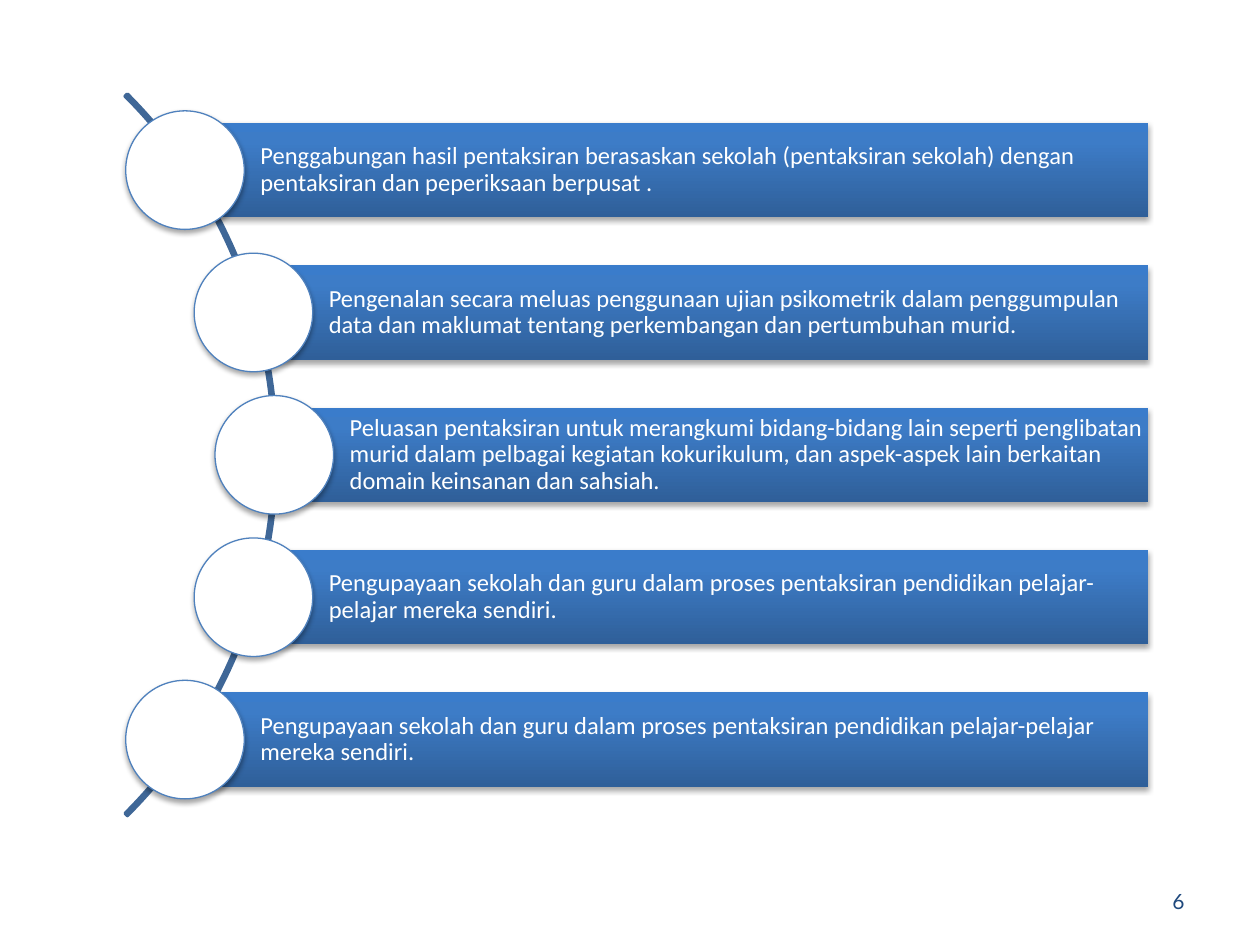
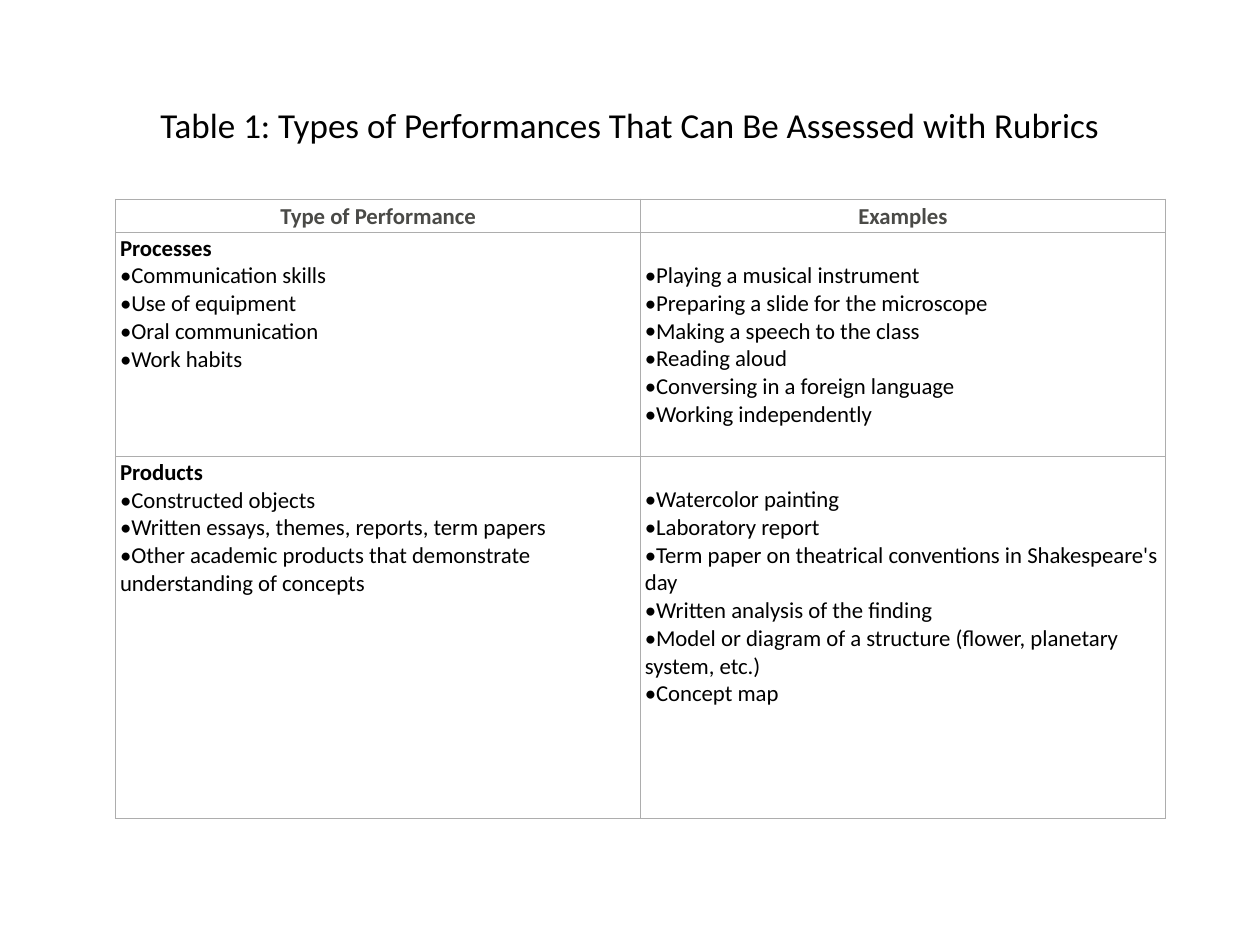
from copy import deepcopy

from lxml import etree
from pptx import Presentation
from pptx import util as u
from pptx.dml.color import RGBColor
from pptx.enum import shapes, text
from pptx.oxml import parse_xml
from pptx.oxml.ns import nsdecls, qn

COLOURS = {
    "white": "FFFFFF",
    "black": "000000",
    "arc": "3F6797",
    "ring": "4F81BD",
    "bar_bottom": "2F5F99",
    "bar_middle": "3D7CC7",
    "bar_top": "3A7CCB",
    "page": "1F497D",
    "heading": "4A4A47",
    "grid": "ADADAD",
}
FONT = "Calibri"
PAGE_FONT = "Lato"

# Curved list, in cm
ARC_LEFT, ARC_SIZE = -14.99, 20.57
MIDDLE_Y, PITCH = 9.17, 2.87
BAR_HEIGHT, BAR_RIGHT = 1.9, 23.14
CIRCLE_SIZE = 2.39
CIRCLE_CENTRES = [3.73, 5.11, 5.53, 5.11, 3.73]

EMPOWERMENT = ("Pengupayaan sekolah dan guru dalam proses pentaksiran "
               "pendidikan pelajar-pelajar mereka sendiri.")
REFORMS = [
    "Penggabungan hasil pentaksiran berasaskan sekolah (pentaksiran sekolah) "
    "dengan pentaksiran dan peperiksaan berpusat .",
    "Pengenalan secara meluas penggunaan ujian psikometrik dalam penggumpulan "
    "data dan maklumat tentang perkembangan dan pertumbuhan murid.",
    "Peluasan pentaksiran untuk merangkumi bidang-bidang lain seperti "
    "penglibatan murid dalam pelbagai kegiatan kokurikulum, dan aspek-aspek "
    "lain berkaitan domain keinsanan dan sahsiah.",
    EMPOWERMENT,
    EMPOWERMENT,
]

# Rubric table: (heading, kinds, examples)
HEADINGS = ["Type of Performance", "Examples"]
PERFORMANCES = [
    ("Processes",
     ["Communication skills", "Use of equipment", "Oral communication",
      "Work habits"],
     ["Playing a musical instrument", "Preparing a slide for the microscope",
      "Making a speech to the class", "Reading aloud",
      "Conversing in a foreign language", "Working independently"]),
    ("Products",
     ["Constructed objects", "Written essays, themes, reports, term papers",
      "Other academic products that demonstrate understanding of concepts"],
     ["Watercolor painting", "Laboratory report",
      "Term paper on theatrical conventions in Shakespeare's day",
      "Written analysis of the finding",
      "Model or diagram of a structure (flower, planetary system, etc.)",
      "Concept map"]),
]
ROW_HEIGHTS = [0.68, 4.52, 7.29]
COLUMN_WIDTH = 10.58


def rgb(name):
    return RGBColor.from_string(COLOURS[name])


def add_run(paragraph, words, size, colour, bold=False, font=FONT):
    run = paragraph.add_run()
    run.text = words
    run.font.name = font
    run.font.size = u.Pt(size)
    run.font.bold = bold
    run.font.color.rgb = rgb(colour)


def set_margins(box, left, top, right, bottom):
    box.margin_left, box.margin_top = u.Cm(left), u.Cm(top)
    box.margin_right, box.margin_bottom = u.Cm(right), u.Cm(bottom)


def add_preset(slide, kind, left, top, width, height):
    shape = slide.shapes.add_shape(
        kind, u.Cm(left), u.Cm(top), u.Cm(width), u.Cm(height))
    shape.shadow.inherit = False
    return shape


def cast_shadow(shape):
    effects = shape._element.spPr.find(qn("a:effectLst"))
    effects.append(parse_xml(
        f'<a:outerShdw {nsdecls("a")} blurRad="{u.Pt(3.1)}" '
        f'dist="{u.Pt(1.8)}" dir="5400000" rotWithShape="0">'
        f'<a:srgbClr val="{COLOURS["black"]}"><a:alpha val="35000"/>'
        '</a:srgbClr></a:outerShdw>'))


def fill_bar(bar):
    bar.fill.gradient()
    bar.fill.gradient_angle = 90
    stops = bar._element.spPr.find(qn("a:gradFill")).find(qn("a:gsLst"))
    stops.append(deepcopy(stops[-1]))
    shades = [(0, "bar_bottom"), (0.8, "bar_middle"), (1, "bar_top")]
    for stop, (position, colour) in zip(bar.fill.gradient_stops, shades):
        stop.position = position
        stop.color.rgb = rgb(colour)


def add_arc(slide):
    arc = add_preset(slide, shapes.MSO_SHAPE.BLOCK_ARC, ARC_LEFT,
                     MIDDLE_Y - ARC_SIZE / 2, ARC_SIZE, ARC_SIZE)
    for index, value in enumerate([189, 27, 0.003]):
        arc.adjustments[index] = value
    arc.fill.background()
    arc.line.color.rgb = rgb("arc")
    arc.line.width = u.Pt(2)


def add_reform(slide, words, centre_x, centre_y):
    # Bar with its text
    bar = add_preset(slide, shapes.MSO_SHAPE.RECTANGLE, centre_x,
                     centre_y - BAR_HEIGHT / 2, BAR_RIGHT - centre_x, BAR_HEIGHT)
    fill_bar(bar)
    bar.line.fill.background()
    cast_shadow(bar)
    frame = bar.text_frame
    frame.word_wrap = True
    frame.vertical_anchor = text.MSO_ANCHOR.MIDDLE
    set_margins(frame, 1.52, 0.1, 0.05, 0.1)
    paragraph = frame.paragraphs[0]
    paragraph.alignment = text.PP_ALIGN.LEFT
    paragraph.line_spacing = 0.9
    add_run(paragraph, words, 14, "white")

    # Circle over the bar's left end
    circle = add_preset(slide, shapes.MSO_SHAPE.OVAL,
                        centre_x - CIRCLE_SIZE / 2, centre_y - CIRCLE_SIZE / 2,
                        CIRCLE_SIZE, CIRCLE_SIZE)
    circle.fill.solid()
    circle.fill.fore_color.rgb = rgb("white")
    circle.line.color.rgb = rgb("ring")
    circle.line.width = u.Pt(0.75)
    cast_shadow(circle)


def add_page_number(slide, number):
    frame = slide.shapes.add_textbox(
        u.Cm(18.21), u.Cm(17.65), u.Cm(5.92), u.Cm(1.02)).text_frame
    frame.word_wrap = True
    frame.vertical_anchor = text.MSO_ANCHOR.MIDDLE
    frame.paragraphs[0].alignment = text.PP_ALIGN.RIGHT
    add_run(frame.paragraphs[0], number, 12, "page", font=PAGE_FONT)


def set_title(slide, words):
    title = slide.shapes.title
    title.left, title.top = u.Cm(1.27), u.Cm(0.76)
    title.width, title.height = u.Cm(22.86), u.Cm(3.18)
    frame = title.text_frame
    frame.auto_size = text.MSO_AUTO_SIZE.NONE
    frame.vertical_anchor = text.MSO_ANCHOR.MIDDLE
    frame.margin_top = u.Cm(0.46)
    frame.paragraphs[0].alignment = text.PP_ALIGN.CENTER
    add_run(frame.paragraphs[0], words, 20, "black")


def style_cell(cell, top, bottom):
    set_margins(cell, 0.09, top, 0.09, bottom)
    properties = cell._tc.get_or_add_tcPr()
    for side in ("lnL", "lnR", "lnT", "lnB"):
        properties.append(parse_xml(
            f'<a:{side} {nsdecls("a")} w="{u.Pt(0.5)}"><a:solidFill>'
            f'<a:srgbClr val="{COLOURS["grid"]}"/></a:solidFill></a:{side}>'))
    cell.fill.solid()
    cell.fill.fore_color.rgb = rgb("white")


def add_bullet(paragraph):
    properties = paragraph._p.get_or_add_pPr()
    etree.SubElement(properties, qn("a:buFont")).set("typeface", FONT)
    etree.SubElement(properties, qn("a:buChar")).set("char", "•")


def write_list(cell, items, heading=None):
    frame = cell.text_frame
    lines = [(item, False) for item in items]
    if heading:
        lines.insert(0, (heading, True))
    for index, (words, is_heading) in enumerate(lines):
        paragraph = frame.add_paragraph() if index else frame.paragraphs[0]
        if not is_heading:
            add_bullet(paragraph)
        add_run(paragraph, words, 13, "black", bold=is_heading)


def add_rubric_table(slide):
    table = slide.shapes.add_table(
        len(ROW_HEIGHTS), len(HEADINGS), u.Cm(2.33), u.Cm(4.01),
        u.Cm(COLUMN_WIDTH * len(HEADINGS)), u.Cm(sum(ROW_HEIGHTS))).table
    table.first_row = table.horz_banding = False
    for column in table.columns:
        column.width = u.Cm(COLUMN_WIDTH)
    for row, height in zip(table.rows, ROW_HEIGHTS):
        row.height = u.Cm(height)

    for column, heading in enumerate(HEADINGS):
        cell = table.cell(0, column)
        style_cell(cell, 0.07, 0.05)
        paragraph = cell.text_frame.paragraphs[0]
        paragraph.alignment = text.PP_ALIGN.CENTER
        add_run(paragraph, heading, 13, "heading", bold=True)

    # Examples start one line lower, level with the first kind
    for row, (heading, kinds, examples) in enumerate(PERFORMANCES, 1):
        kinds_cell, examples_cell = table.cell(row, 0), table.cell(row, 1)
        style_cell(kinds_cell, 0.04, 0.04)
        write_list(kinds_cell, kinds, heading)
        style_cell(examples_cell, 0.59, 0.04)
        write_list(examples_cell, examples)


def main():
    deck = Presentation()
    deck.slide_width, deck.slide_height = u.Cm(25.4), u.Cm(19.05)

    # Assessment reforms
    reforms = deck.slides.add_slide(deck.slide_layouts[6])
    add_arc(reforms)
    for index, (words, centre_x) in enumerate(zip(REFORMS, CIRCLE_CENTRES)):
        add_reform(reforms, words, centre_x, MIDDLE_Y + (index - 2) * PITCH)
    add_page_number(reforms, "6")

    # Rubric table
    rubrics = deck.slides.add_slide(deck.slide_layouts[5])
    set_title(rubrics, "Table 1: Types of Performances That Can Be Assessed "
                       "with Rubrics")
    add_rubric_table(rubrics)

    deck.save("out.pptx")


if __name__ == "__main__":
    main()
